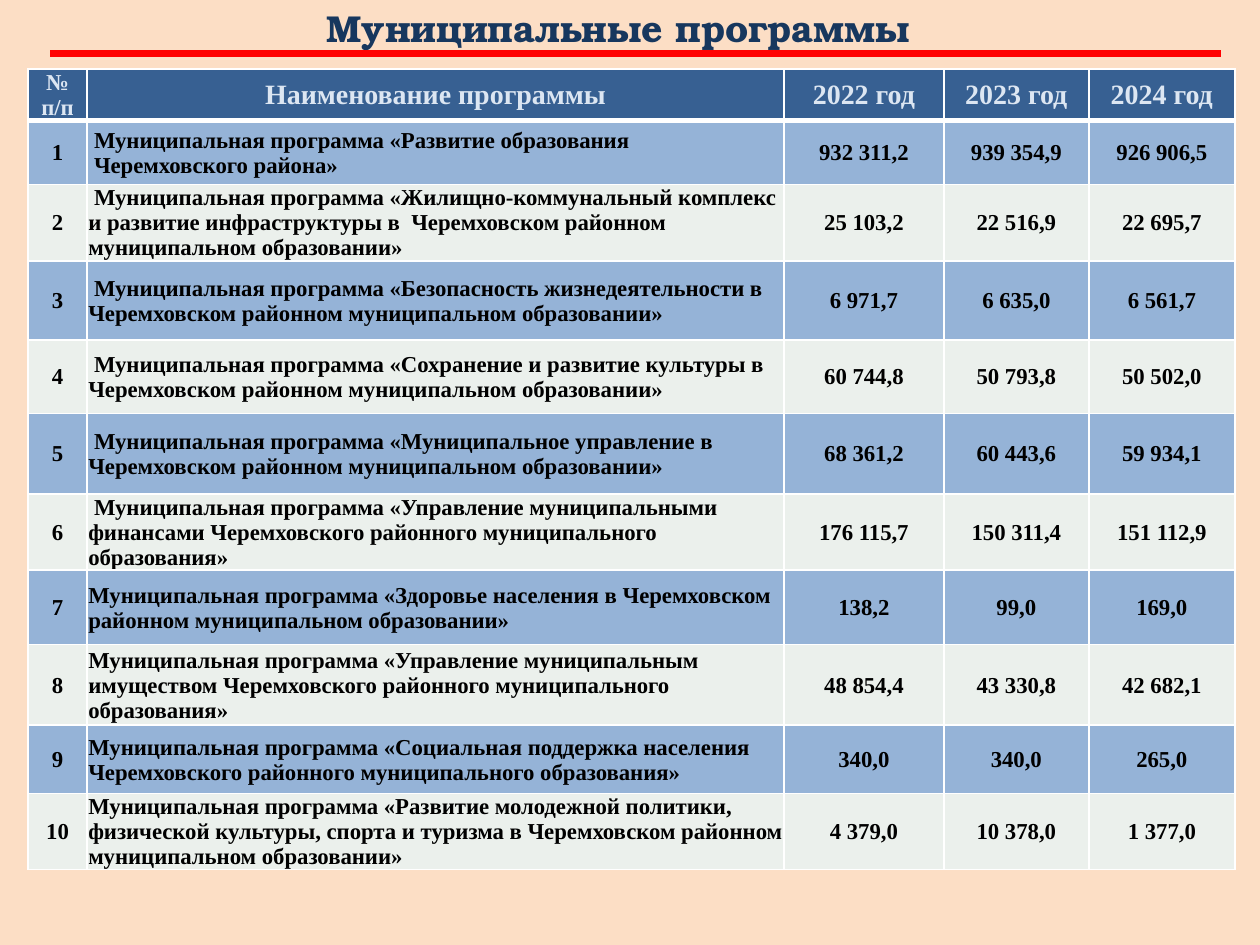
from lxml import etree
from pptx import Presentation
from pptx import util as u
from pptx.dml.color import RGBColor
from pptx.enum import shapes, text
from pptx.oxml import ns

PEACH = RGBColor(0xFC, 0xD5, 0xB5)
NAVY = RGBColor(0x17, 0x37, 0x5E)
RED = RGBColor(0xFF, 0x00, 0x00)
WHITE = RGBColor(0xFF, 0xFF, 0xFF)
BLACK = RGBColor(0x00, 0x00, 0x00)
HEADER_FILL = RGBColor(0x37, 0x60, 0x92)
HEADER_TEXT = RGBColor(0xDC, 0xE6, 0xF2)
BANDS = RGBColor(0xEB, 0xF0, 0xEC), RGBColor(0x95, 0xB3, 0xD7)

TITLE = "Муниципальные программы"
HEADER = ["№ п/п", "Наименование программы", "2022 год", "2023 год", "2024 год"]
# Program name (one line per paragraph), then the amounts by year
PROGRAMS = [
    ("Муниципальная программа «Развитие образования\nЧеремховского района»",
     "932 311,2", "939 354,9", "926 906,5"),
    ("Муниципальная программа «Жилищно-коммунальный комплекс и развитие "
     "инфраструктуры в  Черемховском районном муниципальном образовании»",
     "25 103,2", "22 516,9", "22 695,7"),
    ("Муниципальная программа «Безопасность жизнедеятельности в "
     "Черемховском районном муниципальном образовании»",
     "6 971,7", "6 635,0", "6 561,7"),
    ("Муниципальная программа «Сохранение и развитие культуры в "
     "Черемховском районном муниципальном образовании»",
     "60 744,8", "50 793,8", "50 502,0"),
    ("Муниципальная программа «Муниципальное управление в "
     "Черемховском районном муниципальном образовании»",
     "68 361,2", "60 443,6", "59 934,1"),
    ("Муниципальная программа «Управление муниципальными финансами "
     "Черемховского районного муниципального образования»",
     "176 115,7", "150 311,4", "151 112,9"),
    ("Муниципальная программа «Здоровье населения в Черемховском "
     "районном муниципальном образовании»",
     "138,2", "99,0", "169,0"),
    ("Муниципальная программа «Управление муниципальным имуществом "
     "Черемховского районного муниципального образования»",
     "48 854,4", "43 330,8", "42 682,1"),
    ("Муниципальная программа «Социальная поддержка населения "
     "Черемховского районного муниципального образования»",
     "340,0", "340,0", "265,0"),
    ("Муниципальная программа «Развитие молодежной политики, физической "
     "культуры, спорта и туризма в Черемховском районном муниципальном образовании»",
     "4 379,0", "10 378,0", "1 377,0"),
]
COL_WIDTHS = [33.8, 398.2, 91.4, 82.8, 83.5]
ROW_HEIGHTS = [28.1, 36.7, 40.3, 45.4, 41.8, 46.1, 43.2, 42.5, 46.1, 38.9, 39.6]
NAME_COL = 1
INDENTED_ROWS = range(1, 7)


def set_borders(cell, widths):
    """Draw white cell edges; widths maps an edge tag to points."""
    pr = cell._tc.get_or_add_tcPr()
    for i, (tag, width) in enumerate(widths.items()):
        ln = etree.Element(ns.qn(f"a:{tag}"), w=str(u.Pt(width)))
        fill = etree.SubElement(ln, ns.qn("a:solidFill"))
        etree.SubElement(fill, ns.qn("a:srgbClr"), val=str(WHITE))
        pr.insert(i, ln)


def style(p, name, size, color, align):
    p.alignment = align
    p.font.name, p.font.size, p.font.bold = name, u.Pt(size), True
    p.font.color.rgb = color


prs = Presentation()
prs.slide_width, prs.slide_height = u.Pt(720), u.Pt(540)
s = prs.slides.add_slide(prs.slide_layouts[6])

# Background, 78 % opaque
bg = s.background.fill
bg.solid()
bg.fore_color.rgb = PEACH
etree.SubElement(s.background._cSld.find(".//" + ns.qn("a:srgbClr")),
                 ns.qn("a:alpha"), val="78000")

# Table of programs
rows = [HEADER] + [(str(n), *row) for n, row in enumerate(PROGRAMS, 1)]
table = s.shapes.add_table(len(rows), len(HEADER), u.Pt(16), u.Pt(39.5),
                           u.Pt(sum(COL_WIDTHS)), u.Pt(sum(ROW_HEIGHTS))).table
table.horz_banding = False
for col, width in zip(table.columns, COL_WIDTHS):
    col.width = u.Pt(width)
for r, values in enumerate(rows):
    table.rows[r].height = u.Pt(ROW_HEIGHTS[r])
    for c, value in enumerate(values):
        cell = table.cell(r, c)
        cell.margin_left = cell.margin_right = cell.margin_top = u.Pt(0.7)
        cell.margin_bottom = 0
        cell.vertical_anchor = text.MSO_ANCHOR.MIDDLE
        cell.fill.solid()
        cell.fill.fore_color.rgb = BANDS[r % 2] if r else HEADER_FILL
        set_borders(cell, {"lnL": 1, "lnR": 1, "lnT": 3 if r == 1 else 1,
                           "lnB": 1 if r else 3})
        cell.text_frame.text = value
        is_name = r > 0 and c == NAME_COL
        for p in cell.text_frame.paragraphs:
            if is_name and r in INDENTED_ROWS:
                p._p.get_or_add_pPr().set("indent", str(u.Pt(3.25)))
            style(p, "Times New Roman", 13 if r or c == 0 else 16,
                  BLACK if r else HEADER_TEXT,
                  text.PP_ALIGN.LEFT if is_name else text.PP_ALIGN.CENTER)

# Title
tf = s.shapes.add_textbox(u.Pt(-5.8), 0, u.Pt(703.4), u.Pt(31)).text_frame
tf.word_wrap = True
tf.margin_left = u.Pt(21.8)
tf.vertical_anchor = text.MSO_ANCHOR.MIDDLE
tf.text = TITLE
style(tf.paragraphs[0], "TeX Gyre Bonum", 21.4, NAVY, text.PP_ALIGN.CENTER)

# Red rule under the title
rule = s.shapes.add_connector(shapes.MSO_CONNECTOR.STRAIGHT,
                              u.Pt(28.6), u.Pt(30.7), u.Pt(697.5), u.Pt(30.7))
rule.line.color.rgb = RED
rule.line.width = u.Pt(3.75)
etree.SubElement(rule._element.spPr, ns.qn("a:effectLst"))

prs.save("out.pptx")
